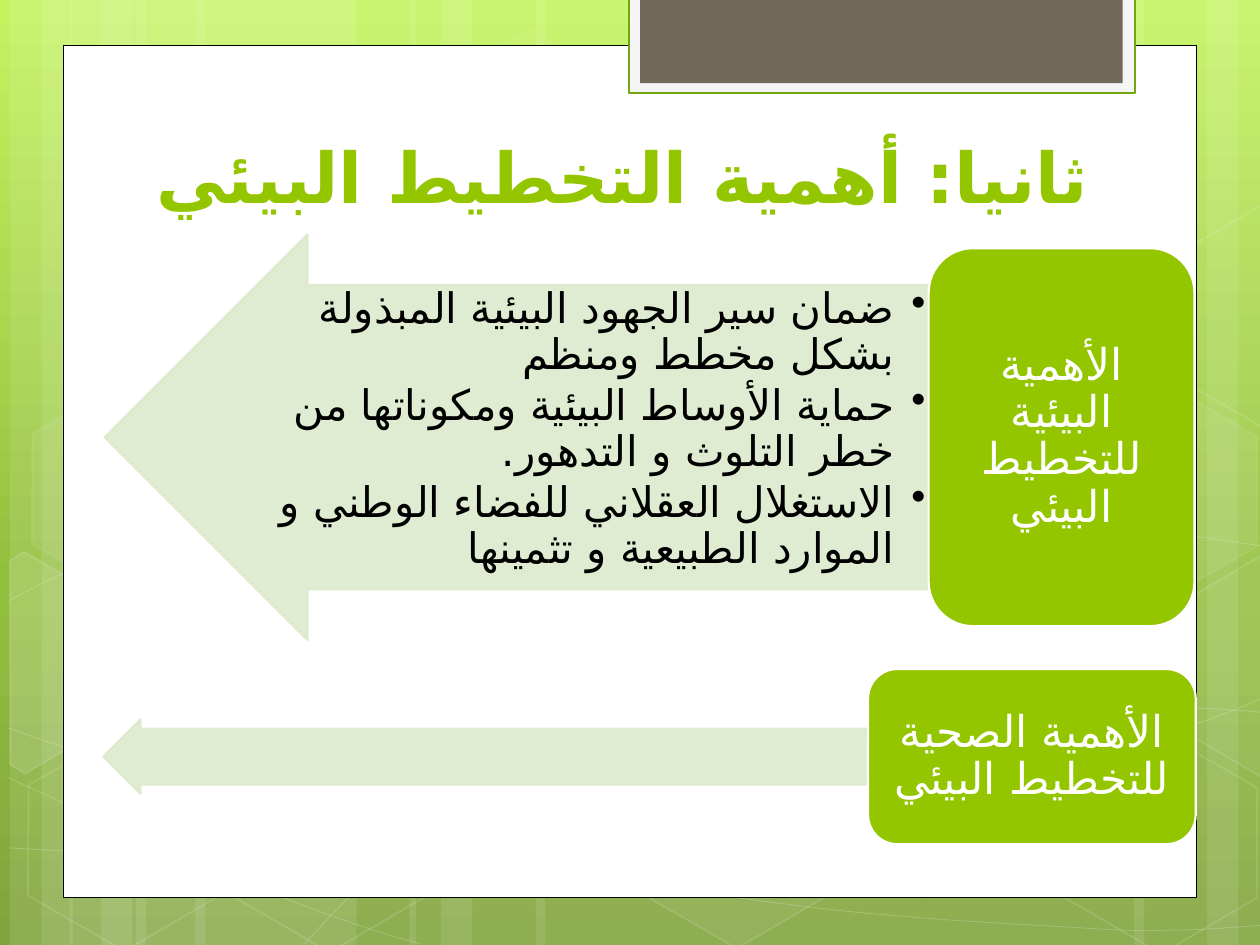
from copy import deepcopy

from lxml.etree import SubElement
from pptx import Presentation
from pptx.dml.color import RGBColor
from pptx.enum.shapes import MSO_SHAPE as Kind
from pptx.enum.text import MSO_ANCHOR as Anchor, MSO_AUTO_SIZE as Fit, PP_ALIGN as Align
from pptx.oxml.ns import qn
from pptx.util import Inches, Pt

FONT = "Quicksand"
ARABIC = "DejaVu Sans"
HEX = {
    "light": "C3F35F", "mid": "93BF3F", "deep": "81A53E", "white": "FFFFFF",
    "black": "000000", "green": "94C600", "edge": "74A510", "pale": "DCEACC",
    "brown": "71685A", "smoke": "F5F5F5",
}
STRIPES = [
    (1.08, 1.75), (0.08, 0.5), (0.33, 0.83), (1.55, 1.75), (0.55, 0.5), (0.8, 0.83),
    (7.33, 1.75), (9.58, 0.5), (9, 0.83), (4.25, 3.08), (3.25, 0.5), (3.5, 0.83),
]
# Each wave is a start point followed by cubic Bezier triples.
WAVES = [
    [(0.07, 6.73), (0.61, 6.76), (1.15, 6.79), (1.9, 6.78), (2.65, 6.77), (3.58, 6.75),
     (4.58, 6.65), (5.58, 6.55), (7, 6.36), (7.92, 6.17), (8.83, 5.98), (9.77, 5.68),
     (10.07, 5.51)],
    [(0.07, 4.77), (0.36, 4.61), (0.65, 4.46), (1.21, 4.31), (1.78, 4.16), (2.59, 3.94),
     (3.47, 3.87), (4.36, 3.8), (5.44, 3.79), (6.54, 3.87), (7.64, 3.95), (9.47, 4.26),
     (10.07, 4.34)],
    [(0.06, 6.17), (1.27, 6.72), (2.47, 7.27), (3.34, 7.49)],
    [(0.07, 5.78), (0.38, 5.89), (0.7, 6), (1.28, 6.16), (1.86, 6.31), (2.73, 6.56),
     (3.57, 6.73), (4.4, 6.9), (5.45, 7.08), (6.28, 7.18), (7.11, 7.29), (8, 7.33),
     (8.53, 7.36), (9.05, 7.4), (9.19, 7.38), (9.45, 7.38), (9.71, 7.37), (9.89, 7.35),
     (10.07, 7.34)],
    [(2.42, 7.49), (2.6, 7.29), (2.78, 7.09), (3.02, 6.91), (3.26, 6.73), (3.6, 6.53),
     (3.88, 6.39), (4.16, 6.25), (4.33, 6.19), (4.7, 6.09), (5.06, 5.99), (5.73, 5.85),
     (6.08, 5.78), (6.44, 5.71), (6.49, 5.71), (6.8, 5.69), (7.11, 5.66), (7.6, 5.63),
     (7.94, 5.62), (8.29, 5.61), (8.86, 5.62), (8.86, 5.62), (8.86, 5.62), (9.53, 5.62),
     (9.53, 5.62), (9.71, 5.63), (9.88, 5.64), (9.97, 5.65), (10.06, 5.66), (10.03, 5.65),
     (10.06, 5.66)],
]
WAVES[4].pop(20)  # the curve ends on its own last control point
WAVES[4].insert(20, (8.86, 5.62))
# left, top, fill opacity, line opacity (percent)
HEXES = [
    (3.34, 0.36, 4, 8), (4.97, 5.89, 6, 12), (0.11, 5.91, 0, 12), (0.14, 3.12, 7, 8),
    (1.74, 5.92, 0, 12), (7.53, 4.53, 10, 12), (8.34, 5.93, 0, 12), (8.34, 3.14, 7, 8),
]
# corner points, fill opacity
CUT_HEXES = [
    ([(0.08, 4.45), (0.19, 4.38), (0.96, 4.82), (0.95, 5.7), (0.2, 6.14), (0.08, 6.07)], 10),
    ([(9.26, 4.85), (10.01, 4.41), (10.09, 4.46), (10.09, 6.13), (10.02, 6.17),
      (9.26, 5.73)], 4),
    ([(9.26, 2.07), (10.01, 1.63), (10.1, 1.68), (10.09, 3.35), (10.02, 3.39),
      (9.26, 2.95)], 0),
]
POINTS = [
    "ضمان سير الجهود البيئية المبذولة بشكل مخطط ومنظم",
    "حماية الأوساط البيئية ومكوناتها من خطر التلوث و التدهور.",
    "الاستغلال العقلاني للفضاء الوطني و الموارد الطبيعية و تثمينها",
]


def rgb(name):
    return RGBColor.from_string(HEX[name])


def tint(fill, name, alpha=100):
    """Fill solidly at an opacity in percent; zero means no fill."""
    if not alpha:
        fill.background()
        return
    fill.solid()
    fill.fore_color.rgb = rgb(name)
    if alpha < 100:
        node = fill._xPr.find(qn("a:solidFill")).find(qn("a:srgbClr"))
        SubElement(node, qn("a:alpha"), val=str(alpha * 1000))


def paint(shape, fill, alpha=100, line=None, width=1, fade=100):
    shape.shadow.inherit = False
    tint(shape.fill, fill, alpha)
    if line:
        shape.line.width = Pt(width)
        tint(shape.line.fill, line, fade)
    else:
        shape.line.fill.background()


def add(slide, kind, box, *look, **more):
    shape = slide.shapes.add_shape(kind, *map(Inches, box))
    paint(shape, *look, **more)
    return shape


def trace(slide, dots, close):
    dots = [(Inches(x), Inches(y)) for x, y in dots]
    pen = slide.shapes.build_freeform(*dots[0])
    pen.add_line_segments(dots[1:], close=close)
    return pen.convert_to_shape()


def bend(shape):
    """Turn every three line segments into one cubic Bezier piece."""
    lines = list(shape._element.iter(qn("a:lnTo")))
    for i in range(0, len(lines), 3):
        piece = SubElement(lines[i].getparent(), qn("a:cubicBezTo"))
        for line in lines[i:i + 3]:
            piece.append(line[0])
            line.getparent().remove(line)
    return shape


def style(para, size, color, bold=False):
    font = para.font
    font.size, font.bold, font.name = Pt(size), bold, FONT
    font.color.rgb = rgb(color)
    SubElement(font._element, qn("a:cs"), typeface=ARABIC)


def flow(para, align, after):
    """Set right-to-left direction and spacing."""
    para.alignment = align
    para.line_spacing = 0.9
    para.space_after = Pt(after)
    para._p.get_or_add_pPr().set("rtl", "1")


def backdrop(slide):
    fill = slide.background.fill
    fill.gradient()
    stops = slide.element.find(".//" + qn("a:gsLst"))
    stops.append(deepcopy(stops[-1]))
    fill.gradient_angle = 270
    for stop, name, place in zip(fill.gradient_stops, ("light", "mid", "deep"), (0, 0.62, 1)):
        stop.color.rgb = rgb(name)
        stop.position = place

    for left, wide in STRIPES:
        add(slide, Kind.RECTANGLE, (left, 0, wide, 7.5), "white", 10)
    for knots in WAVES:
        paint(bend(trace(slide, knots, False)), "white", 0, "white", 0.5, 20)
    for left, top, alpha, fade in HEXES:
        cell = add(slide, Kind.HEXAGON, (left, top, 1.75, 1.52), "white", alpha, "white", 1, fade)
        cell.adjustments[0] = 0.285
        cell.rotation = 30
    for dots, alpha in CUT_HEXES:
        paint(trace(slide, dots, True), "white", alpha, "white", 1, 12)


def panel(slide):
    add(slide, Kind.RECTANGLE, (0.5, 0.36, 9, 6.76), "white", line="black", width=0.5)
    add(slide, Kind.RECTANGLE, (4.99, -0.02, 4.02, 0.76), "smoke", line="edge", width=1.25)
    add(slide, Kind.RECTANGLE, (5.08, -0.02, 3.83, 0.68), "brown")


def heading(slide, box, text):
    title = slide.shapes.title
    title.left, title.top, title.width, title.height = map(Inches, box)
    slide.shapes._spTree.append(title._element)  # bring in front of the panel
    frame = title.text_frame
    frame.text = text
    frame.auto_size, frame.vertical_anchor = Fit.NONE, Anchor.BOTTOM
    para = frame.paragraphs[0]
    para.alignment = Align.LEFT
    style(para, 40, "green", True)


def bullets(slide, box, items):
    frame = slide.shapes.add_textbox(*map(Inches, box)).text_frame
    frame.word_wrap = True
    frame.margin_left = frame.margin_right = Inches(0.02)
    frame.margin_top = frame.margin_bottom = Inches(0.02)
    frame.text = "\n".join(items)
    for para in frame.paragraphs:
        para.level = 1
        flow(para, Align.RIGHT, 3.6)
        props = para._p.pPr
        props.set("marL", str(Inches(0.25)))
        props.set("indent", str(-Inches(0.25)))
        SubElement(props, qn("a:buChar"), char="•")
        style(para, 24, "black")


def topic(slide, box, wide, thick, label, items=()):
    """Place a label block at the right of the box, with an arrow leaving it leftwards."""
    left, top, width, height = box
    reach = width - wide
    arrow = add(slide, Kind.RIGHT_ARROW, (left, top + (height - thick) / 2, reach, thick),
                "pale", 90, "pale", 1.25, 90)
    arrow.rotation = 180
    arrow.adjustments[0] = 0.75
    if items:
        inner = thick * 0.75
        head = thick * 0.375
        bullets(slide, (left + head, top + (height - inner) / 2, reach - head, inner), items)
    block = add(slide, Kind.ROUNDED_RECTANGLE, (left + reach, top, wide, height),
                "green", line="white", width=1.25)
    frame = block.text_frame
    frame.word_wrap, frame.vertical_anchor = True, Anchor.MIDDLE
    frame.text = label
    para = frame.paragraphs[0]
    flow(para, Align.CENTER, 0)
    style(para, 25, "white")


def main():
    deck = Presentation()
    deck.slide_width, deck.slide_height = Inches(10), Inches(7.5)
    slide = deck.slides.add_slide(deck.slide_layouts[5])
    backdrop(slide)
    panel(slide)
    heading(slide, (1.14, 0.84, 7.68, 0.94), "ثانيا: أهمية التخطيط البيئي")
    topic(slide, (0.83, 1.97, 8.65, 3), 2.11, 3.22, "الأهمية البيئية للتخطيط البيئي", POINTS)
    topic(slide, (0.82, 5.31, 8.67, 1.39), 2.6, 0.59, "الأهمية الصحية للتخطيط البيئي")
    deck.save("out.pptx")


if __name__ == "__main__":
    main()
